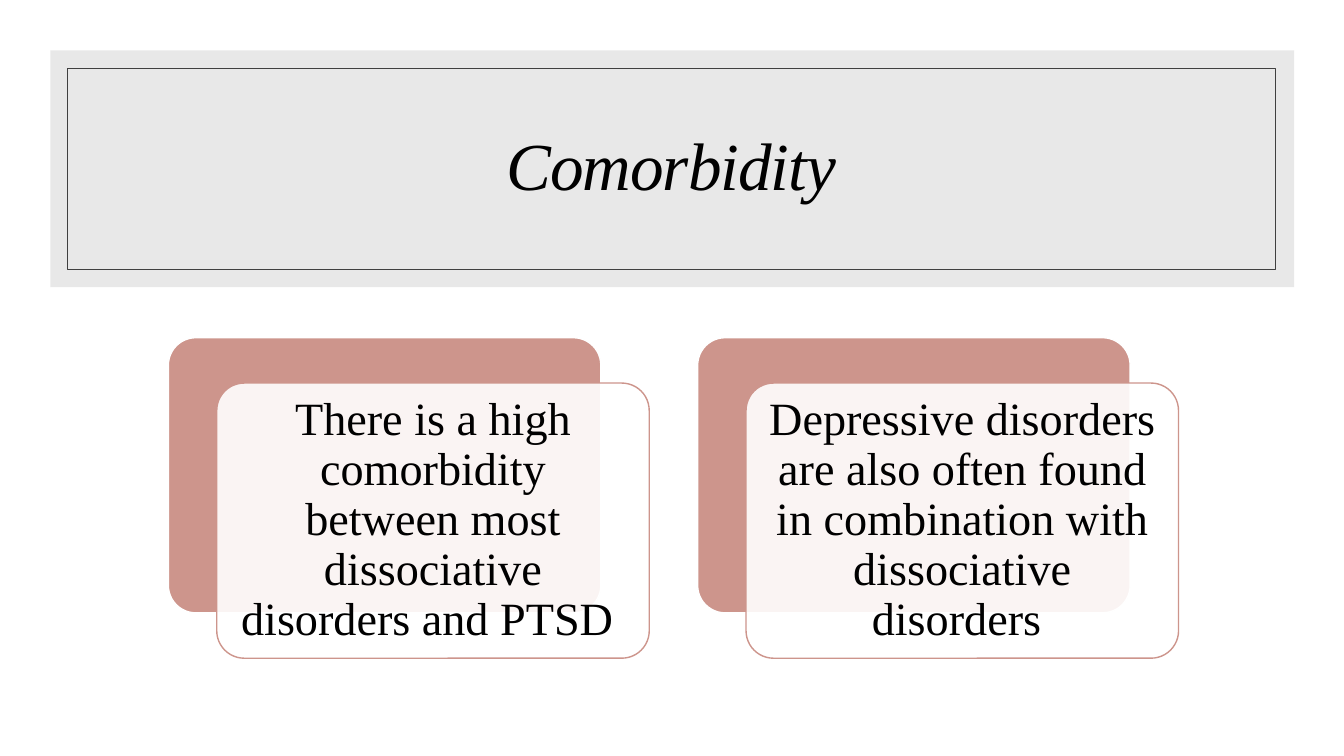
from dataclasses import dataclass

from lxml import etree
from pptx import Presentation
from pptx.dml.color import RGBColor
from pptx.enum.shapes import MSO_SHAPE
from pptx.enum.text import MSO_ANCHOR, PP_ALIGN
from pptx.oxml.ns import qn
from pptx.util import Inches, Pt

RECTANGLE = MSO_SHAPE.RECTANGLE
ROUNDED = MSO_SHAPE.ROUNDED_RECTANGLE
MIDDLE = MSO_ANCHOR.MIDDLE
CENTER = PP_ALIGN.CENTER
SLIDE_WIDTH, SLIDE_HEIGHT = Inches(13.33), Inches(7.5)


@dataclass(frozen=True)
class Theme:
    font: str = "Times New Roman"
    text: str = "000000"
    paper: str = "FFFFFF"
    banner: str = "D9D9D9"
    frame: str = "404040"
    accent: str = "CD958C"
    title_size: int = 48
    card_size: int = 33


THEME = Theme()
CARD_LEFT, CARD_TOP = 12.53, 44.67
CARD_WIDTH, CARD_HEIGHT = 32.18, 36.4
CARD_PITCH = 39.38
FRONT_SHIFT_X, FRONT_SHIFT_Y = 3.6, 6
TEXT_MARGIN_X, TEXT_MARGIN_Y = 0.6, 1.07
STATEMENTS = (
    "There is a high comorbidity between most dissociative disorders and PTSD ",
    "Depressive disorders are also often found in combination with dissociative disorders ",
)


def place(left, top, width, height):
    return (
        round(SLIDE_WIDTH * left / 100),
        round(SLIDE_HEIGHT * top / 100),
        round(SLIDE_WIDTH * width / 100),
        round(SLIDE_HEIGHT * height / 100),
    )


def apply_format(target, values):
    for name, value in values.items():
        setattr(target, name, value)


def add_panel(slide, kind, area, fill=None, opacity=100, line=None, line_width=1):
    panel = slide.shapes.add_shape(kind, *place(*area))
    panel.shadow.inherit = False
    if kind == ROUNDED:
        panel.adjustments[0] = 0.1
    if fill:
        panel.fill.solid()
        panel.fill.fore_color.rgb = RGBColor.from_string(fill)
        if opacity < 100:
            color = panel._element.spPr.find(qn("a:solidFill")).find(qn("a:srgbClr"))
            etree.SubElement(color, qn("a:alpha")).set("val", str(opacity * 1000))
    else:
        panel.fill.background()
    if line:
        panel.line.color.rgb = RGBColor.from_string(line)
        panel.line.width = Pt(line_width)
    else:
        panel.line.fill.background()


def add_text(slide, area, wording, size, inset, italic=False, tracking=0):
    frame = slide.shapes.add_textbox(*place(*area)).text_frame
    apply_format(frame, {
        "word_wrap": True,
        "vertical_anchor": MIDDLE,
        "margin_left": inset,
        "margin_right": inset,
        "margin_top": inset,
        "margin_bottom": inset,
    })
    paragraph = frame.paragraphs[0]
    apply_format(paragraph, {"alignment": CENTER, "line_spacing": 0.9})
    run = paragraph.add_run()
    run.text = wording
    apply_format(run.font, {"name": THEME.font, "size": Pt(size), "italic": italic})
    run.font.color.rgb = RGBColor.from_string(THEME.text)
    if tracking:
        run._r.get_or_add_rPr().set("spc", str(tracking))


def add_banner(slide, title):
    add_panel(slide, RECTANGLE, (3.75, 6.67, 92.55, 31.33), THEME.banner, opacity=60)
    add_panel(slide, RECTANGLE, (5.03, 9.07, 89.85, 26.53), line=THEME.frame, line_width=0.5)
    add_text(slide, (8.7, 12.27, 82.5, 20), title, THEME.title_size, Inches(0.05),
             italic=True, tracking=-70)


def add_card(slide, column, statement):
    left = CARD_LEFT + column * CARD_PITCH
    front_left, front_top = left + FRONT_SHIFT_X, CARD_TOP + FRONT_SHIFT_Y
    add_panel(slide, ROUNDED, (left, CARD_TOP, CARD_WIDTH, CARD_HEIGHT),
              THEME.accent, line=THEME.paper)
    add_panel(slide, ROUNDED, (front_left, front_top, CARD_WIDTH, CARD_HEIGHT),
              THEME.paper, opacity=90, line=THEME.accent)
    text_area = (
        front_left + TEXT_MARGIN_X,
        front_top + TEXT_MARGIN_Y,
        CARD_WIDTH - 2 * TEXT_MARGIN_X,
        CARD_HEIGHT - 2 * TEXT_MARGIN_Y,
    )
    add_text(slide, text_area, statement, THEME.card_size, Inches(0.14))


def main():
    deck = Presentation()
    apply_format(deck, {"slide_width": SLIDE_WIDTH, "slide_height": SLIDE_HEIGHT})
    slide = deck.slides.add_slide(deck.slide_layouts[6])
    add_panel(slide, RECTANGLE, (0, 0, 100, 100), THEME.paper)
    add_banner(slide, "Comorbidity")
    for column, statement in enumerate(STATEMENTS):
        add_card(slide, column, statement)
    deck.save("out.pptx")


if __name__ == "__main__":
    main()
